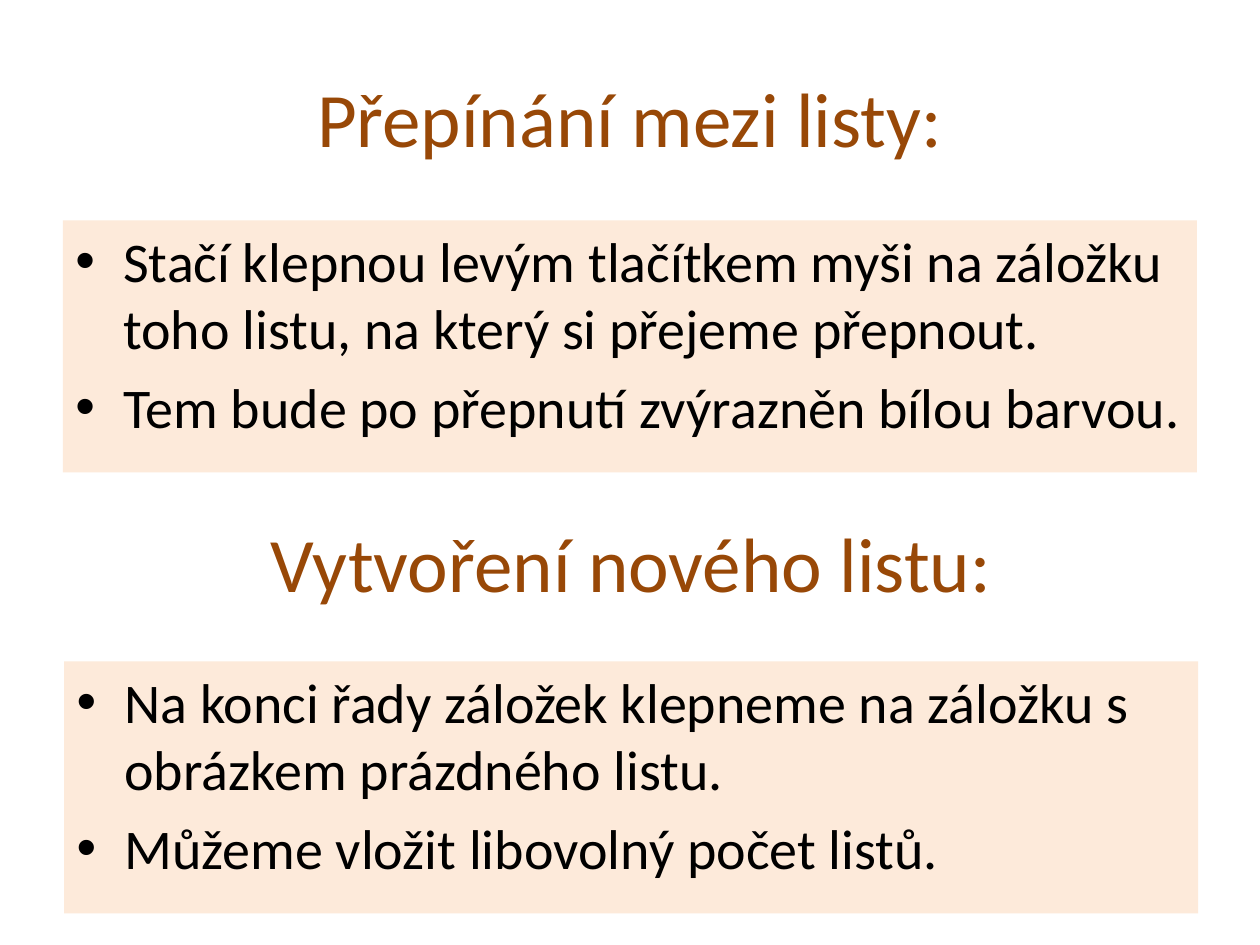
from dataclasses import dataclass

import pptx
import pptx.dml.color
import pptx.enum.shapes
import pptx.enum.text
import pptx.oxml.ns
import pptx.util
from lxml import etree

WIDTH, HEIGHT = pptx.util.Inches(10), pptx.util.Inches(7.5)
COLORS = {"heading": "984807", "panel": "FDEADA", "text": "000000"}
HEADING_FONT = {"name": "Calibri", "size": pptx.util.Pt(44)}
BODY_FONT = {"name": "Calibri", "size": pptx.util.Pt(32)}
SPACE_BEFORE = pptx.util.Pt(6.4)
INDENT = pptx.util.Inches(0.38)

# Shares of the slide's size
BLOCK_W = 0.9
HEADING_H = 1.25 / 7.5
PANEL_H = 2 / 7.5


@dataclass
class Section:
    left: float
    heading_top: float
    panel_top: float
    heading: str
    points: tuple[str, ...]


SECTIONS = (
    Section(0.05, 0.3 / 7.5, 1.75 / 7.5, "Přepínání mezi listy:", (
        "Stačí klepnou levým tlačítkem myši na záložku toho listu, "
        "na který si přejeme přepnout.",
        "Tem bude po přepnutí zvýrazněn bílou barvou.",
    )),
    Section(0.051, 3.83 / 7.5, 0.7, "Vytvoření nového listu:", (
        "Na konci řady záložek klepneme na záložku s obrázkem prázdného listu.",
        "Můžeme vložit libovolný počet listů.",
    )),
)


def rgb(key: str) -> pptx.dml.color.RGBColor:
    return pptx.dml.color.RGBColor.from_string(COLORS[key])


def box(left: float, top: float, height: float) -> tuple[int, ...]:
    """Turn shares of the slide into left, top, width and height."""
    return (round(left * WIDTH), round(top * HEIGHT),
            round(BLOCK_W * WIDTH), round(height * HEIGHT))


def write(p, text: str, font: dict, color: str) -> None:
    r = p.add_run()
    r.text = text
    for name, value in font.items():
        setattr(r.font, name, value)
    r.font.color.rgb = rgb(color)


def add_bullet(p) -> None:
    pPr = p._p.get_or_add_pPr()
    pPr.set("marL", str(INDENT))
    pPr.set("indent", str(-INDENT))
    for tag, attr, value in (("a:buFont", "typeface", "Arial"),
                             ("a:buChar", "char", "•")):
        etree.SubElement(pPr, pptx.oxml.ns.qn(tag)).set(attr, value)


def draw_heading(slide, section: Section) -> None:
    sp = slide.shapes.add_textbox(
        *box(section.left, section.heading_top, HEADING_H))
    tf = sp.text_frame
    tf.word_wrap = True
    tf.vertical_anchor = pptx.enum.text.MSO_ANCHOR.MIDDLE
    p = tf.paragraphs[0]
    p.alignment = pptx.enum.text.PP_ALIGN.CENTER
    write(p, section.heading, HEADING_FONT, "heading")


def draw_panel(slide, section: Section) -> None:
    sp = slide.shapes.add_shape(
        pptx.enum.shapes.MSO_SHAPE.RECTANGLE,
        *box(section.left, section.panel_top, PANEL_H))
    sp.shadow.inherit = False
    sp.fill.solid()
    sp.fill.fore_color.rgb = rgb("panel")
    sp.line.fill.background()
    tf = sp.text_frame
    tf.word_wrap = True
    tf.vertical_anchor = pptx.enum.text.MSO_ANCHOR.TOP
    for i, point in enumerate(section.points):
        p = tf.add_paragraph() if i else tf.paragraphs[0]
        p.alignment = pptx.enum.text.PP_ALIGN.LEFT
        p.space_before = SPACE_BEFORE
        add_bullet(p)
        write(p, point, BODY_FONT, "text")


def main() -> None:
    prs = pptx.Presentation()
    prs.slide_width, prs.slide_height = WIDTH, HEIGHT
    slide = prs.slides.add_slide(prs.slide_layouts[6])
    for section in SECTIONS:
        draw_heading(slide, section)
        draw_panel(slide, section)
    prs.save("out.pptx")


if __name__ == "__main__":
    main()
